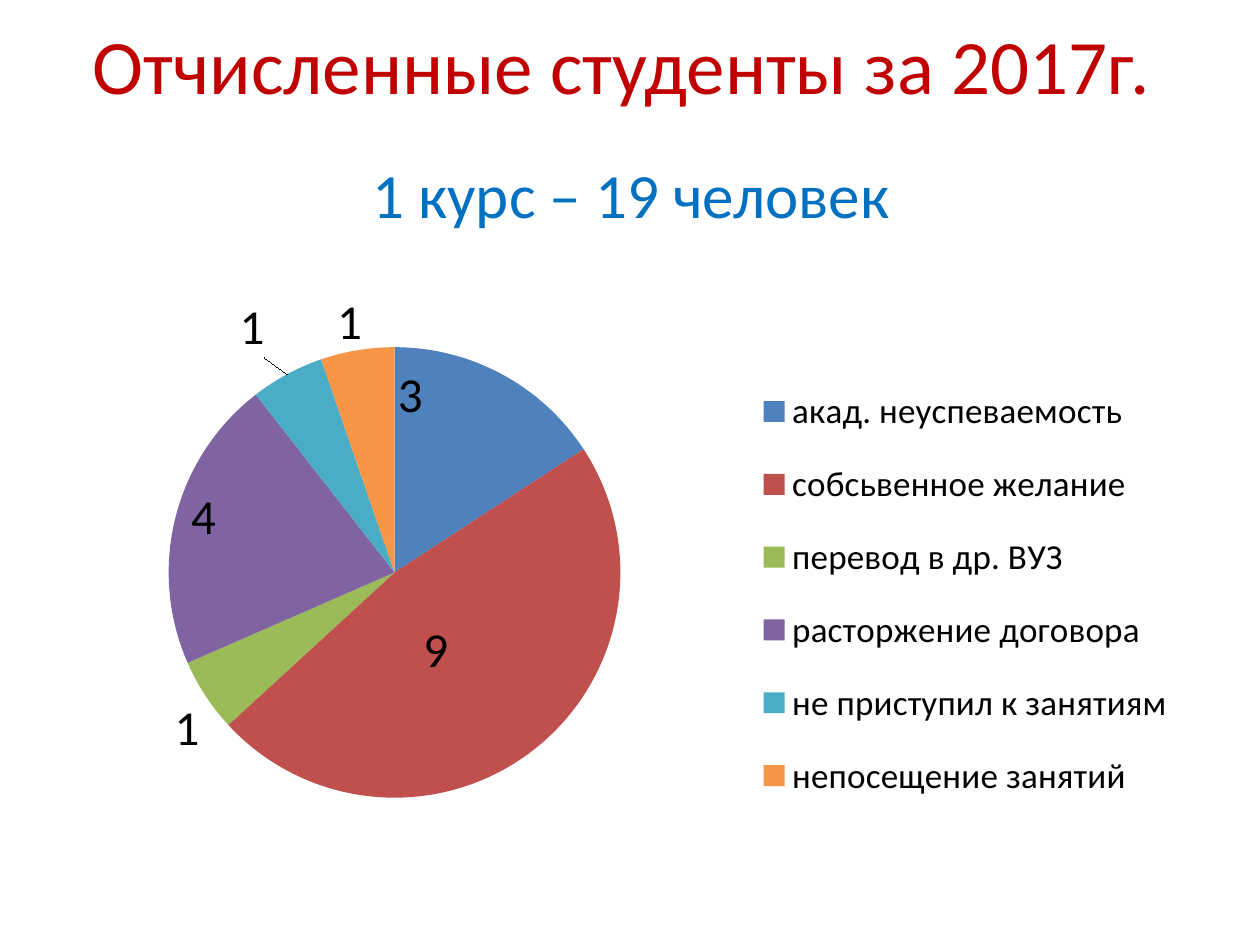
import pptx
import pptx.chart.data
import pptx.dml.color
import pptx.enum.chart
import pptx.enum.text
import pptx.oxml
import pptx.oxml.ns
import pptx.util
from dataclasses import dataclass
from math import copysign, cos, pi, sin
from typing import Optional


@dataclass(frozen=True)
class Theme:
    font: str = "Calibri"
    title: str = "C00000"
    sub: str = "0070C0"
    text: str = "000000"
    title_pt: int = 44
    sub_pt: int = 36
    label_pt: int = 28
    legend_pt: int = 20


@dataclass(frozen=True)
class Box:
    x: int
    y: int
    w: int
    h: int


@dataclass(frozen=True)
class Slice:
    name: str
    value: int
    color: str
    label: Optional[tuple[int, int]] = None  # centre of a moved label


THEME = Theme()
SCALE = 914400 / 126
TITLE = Box(64, 5, 1134, 117)
SUB = Box(64, 135, 1134, 117)
CHART = Box(64, 284, 1134, 624)
PLOT = Box(83, 346, 623, 452)
LEGEND = Box(756, 359, 420, 468)
GAP_X, GAP_Y = 16, 32  # from the rim to the centre of an outer label
SLICES = [
    Slice("акад. неуспеваемость", 3, "4F81BD", (410, 399)),
    Slice("собсьвенное желание", 9, "C0504D", (435, 648)),
    Slice("перевод в др. ВУЗ", 1, "9BBB59"),
    Slice("расторжение договора", 4, "8064A2"),
    Slice("не приступил к занятиям", 1, "4BACC6", (252, 331)),
    Slice("непосещение занятий", 1, "F79646", (347, 327)),
]


def px(n: float) -> int:
    return pptx.util.Emu(round(n * SCALE))


def place(box: Box) -> tuple[int, ...]:
    return tuple(px(n) for n in (box.x, box.y, box.w, box.h))


def style(font, size: int, color: str) -> None:
    font.name = THEME.font
    font.size = pptx.util.Pt(size)
    font.color.rgb = pptx.dml.color.RGBColor.from_string(color)


def write(slide, text: str, *, box: Box, size: int, color: str) -> None:
    frame = slide.shapes.add_textbox(*place(box)).text_frame
    frame.word_wrap = True
    frame.vertical_anchor = pptx.enum.text.MSO_ANCHOR.MIDDLE
    para = frame.paragraphs[0]
    para.alignment = pptx.enum.text.PP_ALIGN.CENTER
    run = para.add_run()
    run.text = text
    style(run.font, size, color)


def layout(**parts):
    """Make a manual chart layout from its named values."""
    body = "".join(f'<c:{key} val="{val}"/>' for key, val in parts.items())
    space = pptx.oxml.ns.nsdecls("c")
    return pptx.oxml.parse_xml(
        f"<c:layout {space}><c:manualLayout>{body}</c:manualLayout></c:layout>")


def share(box: Box) -> dict[str, object]:
    """Give a box as shares of the chart's size."""
    return dict(xMode="edge", yMode="edge",
                x=round((box.x - CHART.x) / CHART.w, 3),
                y=round((box.y - CHART.y) / CHART.h, 3),
                w=round(box.w / CHART.w, 3), h=round(box.h / CHART.h, 3))


def drop(root) -> None:
    for old in root.xpath("./c:layout"):
        root.remove(old)


def shift(index: int) -> dict[str, float]:
    """Find how far a label lies from its usual place outside the rim."""
    total = sum(part.value for part in SLICES)
    before = sum(part.value for part in SLICES[:index])
    turn = 2 * pi * (before + SLICES[index].value / 2) / total
    reach = min(PLOT.w, PLOT.h) / 2
    dx, dy = sin(turn), -cos(turn)
    out_x = PLOT.x + PLOT.w / 2 + reach * dx + copysign(GAP_X, dx)
    out_y = PLOT.y + PLOT.h / 2 + reach * dy + copysign(GAP_Y, dy)
    x, y = SLICES[index].label
    return dict(x=round((x - out_x) / CHART.w, 3),
                y=round((y - out_y) / CHART.h, 3))


def draw_pie(slide) -> None:
    data = pptx.chart.data.CategoryChartData()
    data.categories = [part.name for part in SLICES]
    data.add_series("Series 1", [part.value for part in SLICES])
    chart = slide.shapes.add_chart(
        pptx.enum.chart.XL_CHART_TYPE.PIE, *place(CHART), data).chart
    chart.has_title = False
    style(chart.font, 18, THEME.text)

    # Plot area and legend
    area = chart.element.xpath(".//c:plotArea")[0]
    drop(area)
    area.insert(0, layout(layoutTarget="inner", **share(PLOT)))
    chart.has_legend = True
    chart.legend.position = pptx.enum.chart.XL_LEGEND_POSITION.RIGHT
    chart.legend.include_in_layout = False
    style(chart.legend.font, THEME.legend_pt, THEME.text)
    key = chart.element.xpath(".//c:legend")[0]
    drop(key)
    key.xpath("./c:legendPos")[0].addnext(layout(**share(LEGEND)))

    # Slices and their labels
    plot = chart.plots[0]
    plot.vary_by_categories = True
    series = plot.series[0]
    fit = pptx.enum.chart.XL_LABEL_POSITION.BEST_FIT
    labels = series.data_labels
    labels.show_value = True
    labels.position = fit
    style(labels.font, THEME.label_pt, THEME.text)
    for lead in chart.element.xpath(".//c:ser/c:dLbls/c:showLeaderLines"):
        lead.set("val", "1")
    for index, part in enumerate(SLICES):
        point = series.points[index]
        point.format.fill.solid()
        point.format.fill.fore_color.rgb = (
            pptx.dml.color.RGBColor.from_string(part.color))
        if part.label:
            style(point.data_label.font, THEME.label_pt, THEME.text)
            point.data_label.position = fit
            mark = chart.element.xpath(f".//c:dLbl/c:idx[@val='{index}']")[0]
            mark.addnext(layout(**shift(index)))


def main() -> None:
    deck = pptx.Presentation()
    deck.slide_width, deck.slide_height = px(1260), px(945)
    slide = deck.slides.add_slide(deck.slide_layouts[6])
    write(slide, "Отчисленные студенты за 2017г. ", box=TITLE,
          size=THEME.title_pt, color=THEME.title)
    draw_pie(slide)
    write(slide, "1 курс – 19 человек", box=SUB,
          size=THEME.sub_pt, color=THEME.sub)
    deck.save("out.pptx")


if __name__ == "__main__":
    main()
